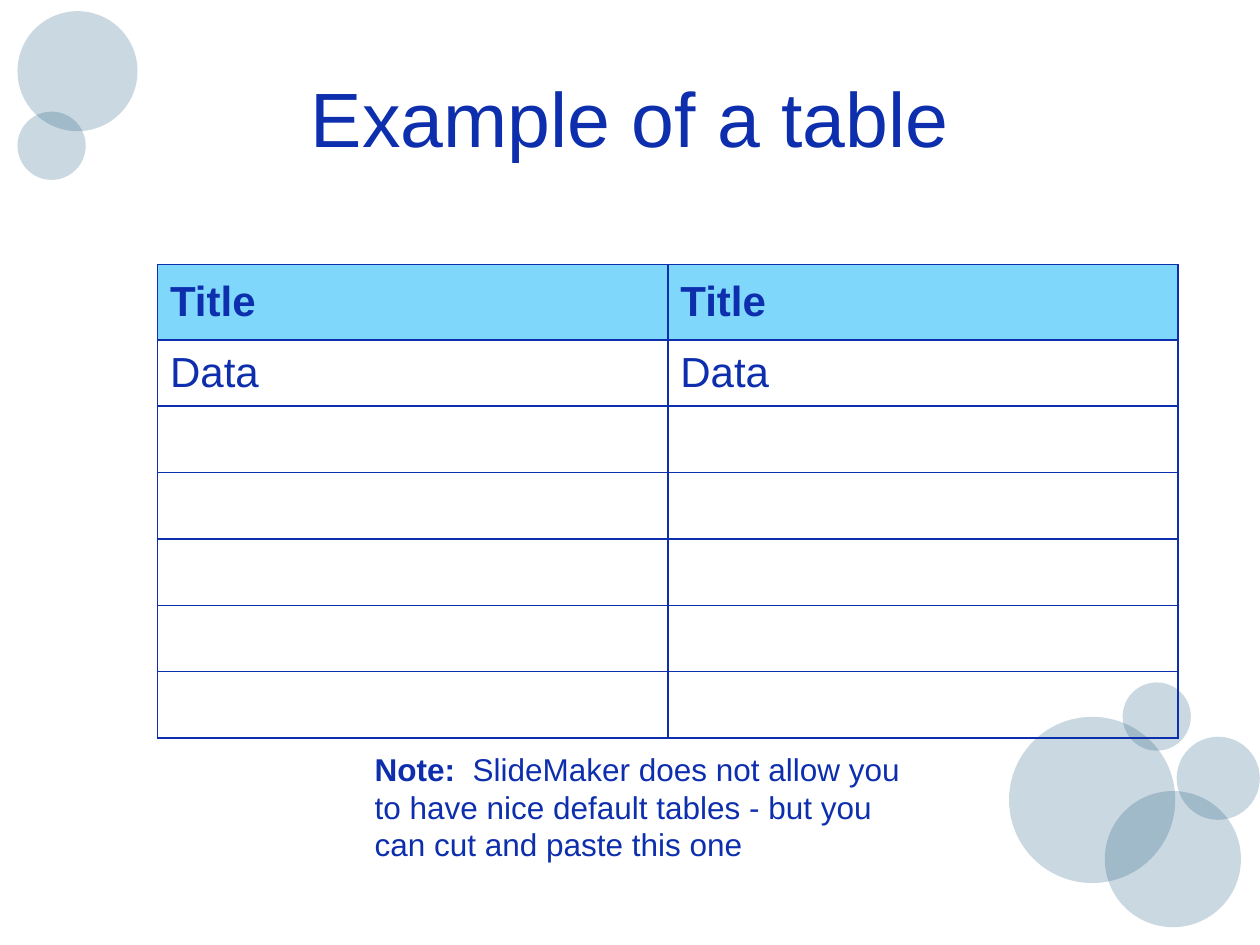
from lxml.etree import SubElement
from pptx import Presentation
from pptx.dml.color import RGBColor
from pptx.enum.shapes import MSO_SHAPE as Shape
from pptx.enum.text import MSO_ANCHOR as Anchor, MSO_AUTO_SIZE as AutoSize, PP_ALIGN as Align
from pptx.oxml.ns import qn
from pptx.util import Pt

NAVY, SKY, BUBBLE = "0E2FAD", "7FD7FC", "1D577E"
TOP_BUBBLES = [(0, 0, 68.6), (0, 57.4, 39)]
BOTTOM_BUBBLES = [(54.7, 62, 77.8), (95.8, 31, 47.5), (0, 19.6, 95), (64.9, 0, 39)]


def color(code):
    return RGBColor.from_string(code)


def style_font(paragraph, size, bold=None):
    paragraph.font.name = "Arial"
    paragraph.font.size = Pt(size)
    paragraph.font.bold = bold
    paragraph.font.color.rgb = color(NAVY)


def add_bubbles(slide, left, top, bubbles):
    for x, y, diameter in bubbles:
        bubble = slide.shapes.add_shape(
            Shape.OVAL, Pt(left + x), Pt(top + y), Pt(diameter), Pt(diameter))
        bubble.shadow.inherit = False
        bubble.line.fill.background()
        bubble.fill.solid()
        bubble.fill.fore_color.rgb = color(BUBBLE)
        tint = next(bubble.fill._xPr.iter(qn("a:srgbClr")))
        SubElement(tint, qn("a:alpha"), val="23000")


def place_title(slide, left, top, width, height):
    title = slide.shapes.title
    title.left, title.top, title.width, title.height = map(Pt, (left, top, width, height))
    frame = title.text_frame
    frame.text = "Example of a table"
    frame.vertical_anchor = Anchor.MIDDLE
    frame.paragraphs[0].alignment = Align.CENTER
    style_font(frame.paragraphs[0], 44)


def add_borders(cell):
    properties = cell._tc.get_or_add_tcPr()
    for side in ("lnL", "lnR", "lnT", "lnB"):
        border = SubElement(properties, qn(f"a:{side}"), w=str(Pt(1)))
        fill = SubElement(border, qn("a:solidFill"))
        SubElement(fill, qn("a:srgbClr"), val=NAVY)


def add_data_table(slide, left, top, width, header_height, row_height):
    rows = [["Title", "Title"], ["Data", "Data"]] + [["", ""]] * 5
    height = header_height + row_height * (len(rows) - 1)
    table = slide.shapes.add_table(
        len(rows), 2, Pt(left), Pt(top), Pt(width), Pt(height)).table
    table.horz_banding = False
    for r, texts in enumerate(rows):
        is_header = r == 0
        table.rows[r].height = Pt(header_height if is_header else row_height)
        for c, text in enumerate(texts):
            cell = table.cell(r, c)
            cell.text = text
            cell.vertical_anchor = Anchor.MIDDLE
            style_font(cell.text_frame.paragraphs[0], 24, is_header)
            add_borders(cell)
            if is_header:
                cell.fill.solid()
                cell.fill.fore_color.rgb = color(SKY)
            else:
                cell.fill.background()


def add_note(slide, left, top, width, height):
    frame = slide.shapes.add_textbox(Pt(left), Pt(top), Pt(width), Pt(height)).text_frame
    frame.word_wrap = True
    frame.auto_size = AutoSize.SHAPE_TO_FIT_TEXT
    paragraph = frame.paragraphs[0]
    style_font(paragraph, 18)
    label = paragraph.add_run()
    label.text = "Note:  "
    label.font.bold = True
    paragraph.add_run().text = (
        "SlideMaker does not allow you to have nice default tables"
        " - but you can cut and paste this one")


def main():
    deck = Presentation()
    deck.slide_width, deck.slide_height = Pt(720), Pt(540)
    slide = deck.slides.add_slide(deck.slide_layouts[5])
    add_bubbles(slide, 10, 6.4, TOP_BUBBLES)
    add_bubbles(slide, 576.6, 390, BOTTOM_BUBBLES)
    place_title(slide, 36, 21.6, 648, 90)
    add_data_table(slide, 90, 151, 583.2, 43.2, 37.95)
    add_note(slide, 207, 425, 323.3, 72)
    deck.save("out.pptx")


if __name__ == "__main__":
    main()
